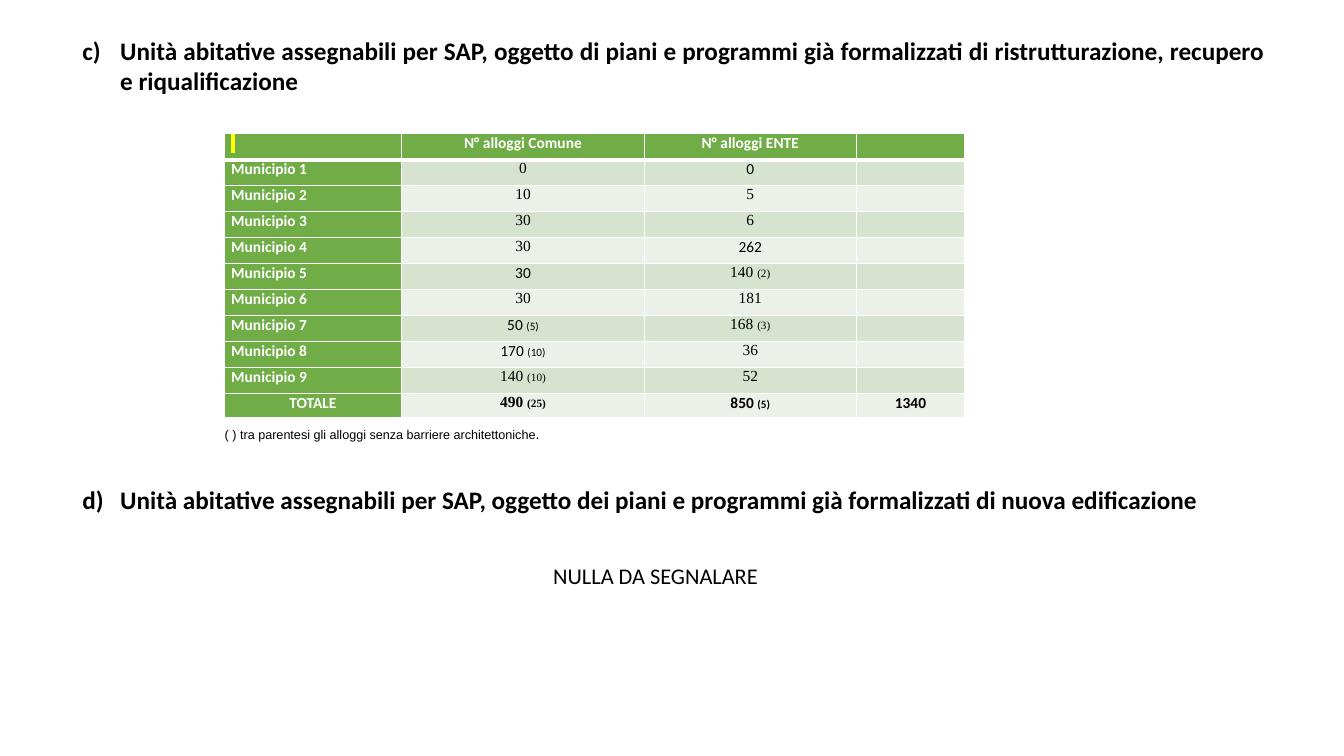
from lxml import etree
from pptx import Presentation
from pptx import util as u
from pptx.dml.color import RGBColor
from pptx.enum import text
from pptx.oxml import ns

Pt = u.Pt
AL = text.PP_ALIGN
GREEN, BLACK, WHITE = "70AD47", "000000", "FFFFFF"
BANDS = ["EBF1E9", "D5E3CF"]
COLS = [126.7, 173.5, 151.2, 77.7]
ROWS = [
    ["", "N° alloggi Comune", "N° alloggi ENTE", ""],
    ["Municipio 1", "0", "0", ""],
    ["Municipio 2", "10", "5", ""],
    ["Municipio 3", "30", "6", ""],
    ["Municipio 4", "30", "262", ""],
    ["Municipio 5", "30", "140 (2)", ""],
    ["Municipio 6", "30", "181", ""],
    ["Municipio 7", "50 (5)", "168 (3)", ""],
    ["Municipio 8", "170 (10)", "36", ""],
    ["Municipio 9", "140 (10)", "52", ""],
    ["TOTALE", "490 (25)", "850 (5)", "1340"],
]
LAST = len(ROWS) - 1
# Number cells set in Calibri; the other numbers are in Times New Roman
SANS = {(1, 2), (4, 2), (5, 1), (7, 1), (8, 1), (LAST, 2), (LAST, 3)}


def color(code):
    return RGBColor.from_string(code)


def sub(node, tag, **attrs):
    return etree.SubElement(node, ns.qn(tag), attrs)


def style(run, size, face="Calibri", code=BLACK, bold=False):
    font = run.font
    font.size, font.name, font.bold = Pt(size), face, bold
    font.color.rgb = color(code)


def add_run(para, words, size, **look):
    run = para.add_run()
    run.text = words
    style(run, size, **look)
    return run


def add_box(slide, left, top, width, height):
    frame = slide.shapes.add_textbox(Pt(left), Pt(top), Pt(width), Pt(height)).text_frame
    frame.word_wrap = True
    return frame


def add_head(slide, top, width, height, start, words):
    """Add a box with a lettered, justified heading."""
    frame = add_box(slide, 51.8, top, width, height)
    para = frame.paragraphs[0]
    add_run(para, words, 18, bold=True)
    para.alignment, para.space_after = AL.JUSTIFY, Pt(6)
    props = para._p.get_or_add_pPr()
    props.set("marL", str(Pt(27)))
    props.set("indent", str(-Pt(27)))
    sub(props, "a:buFont", typeface="+mj-lt")
    sub(props, "a:buAutoNum", type="alphaLcParenR", startAt=str(start))
    return frame


def add_edges(cell, row):
    props = cell._tc.get_or_add_tcPr()
    thick = {0: "B", 1: "T"}.get(row)
    for side in "LRTB":
        line = sub(props, f"a:ln{side}", w=str(Pt(3 if side == thick else 1)))
        sub(sub(line, "a:solidFill"), "a:srgbClr", val=WHITE)


def fill_cell(cell, row, col, words):
    green = row == 0 or col == 0
    add_edges(cell, row)
    cell.fill.solid()
    cell.fill.fore_color.rgb = color(GREEN if green else BANDS[row % 2])
    cell.margin_left = cell.margin_right = Pt(5)
    cell.margin_top = cell.margin_bottom = 0
    para = cell.text_frame.paragraphs[0]
    para.space_after = Pt(6)
    label = col == 0 and row < LAST
    para.alignment = AL.LEFT if label else AL.CENTER
    if not words:
        sub(para._p, "a:endParaRPr", sz="1100")
        return
    look = dict(
        face="Calibri" if green or (row, col) in SANS else "Times New Roman",
        code=WHITE if green else BLACK,
        bold=green or row == LAST,
    )
    count, mark, note = words.partition("(")
    add_run(para, count, 11, **look)
    if mark:
        add_run(para, mark + note, 8, **look)


def add_mark(cell):
    """Put a highlighted no-break space in the corner cell."""
    para = cell.text_frame.paragraphs[0]
    run = add_run(para, " ", 11, code=WHITE, bold=True)
    fill = run._r.rPr.find(ns.qn("a:solidFill"))
    light = etree.Element(ns.qn("a:highlight"))
    sub(light, "a:srgbClr", val="FFFF00")
    fill.addnext(light)
    para._p.append(para._p.find(ns.qn("a:endParaRPr")))


def add_grid(slide):
    frame = slide.shapes.add_table(
        len(ROWS), len(COLS), Pt(160.2), Pt(95.6), Pt(sum(COLS)), Pt(203))
    table = frame.table
    table.first_row = table.horz_banding = False
    for col, width in enumerate(COLS):
        table.columns[col].width = Pt(width)
    for row, line in enumerate(ROWS):
        table.rows[row].height = Pt(17.3 if row == LAST else 18.57)
        for col, words in enumerate(line):
            fill_cell(table.cell(row, col), row, col, words)
    add_mark(table.cell(0, 0))


def add_note(slide):
    frame = add_box(slide, 153.4, 300.2, 502.6, 19.4)
    frame.vertical_anchor = text.MSO_ANCHOR.MIDDLE
    para = frame.paragraphs[0]
    para.alignment = AL.JUSTIFY
    add_run(para, "( ) tra parentesi gli alloggi senza barriere architettoniche", 9, face="Arial")
    add_run(para, ".", 10, face="Arial")


def main():
    deck = Presentation()
    deck.slide_width, deck.slide_height = Pt(960), Pt(540)
    slide = deck.slides.add_slide(deck.slide_layouts[6])
    add_head(slide, 21.6, 859, 51, 3,
             "Unità abitative assegnabili per SAP, oggetto di piani e programmi "
             "già formalizzati di ristrutturazione, recupero e riqualificazione")
    frame = add_head(slide, 342.7, 833, 82, 4,
                     "Unità abitative assegnabili per SAP, oggetto dei piani e programmi "
                     "già formalizzati di nuova edificazione")
    para = frame.add_paragraph()
    add_run(para, "NULLA DA SEGNALARE", 16)
    para.alignment, para.space_before = AL.CENTER, Pt(28)
    add_grid(slide)
    add_note(slide)
    deck.save("out.pptx")


if __name__ == "__main__":
    main()
